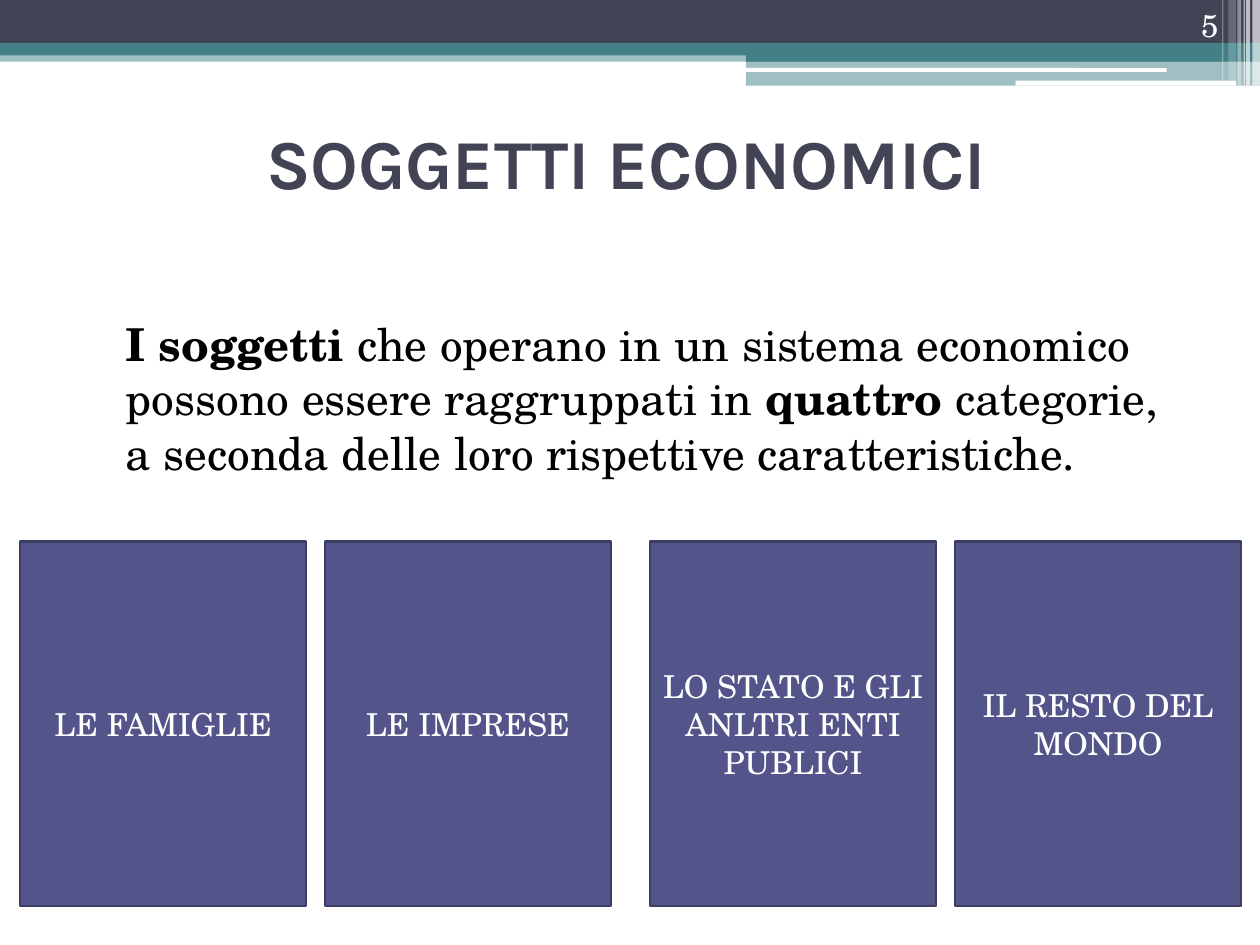
from dataclasses import dataclass

from lxml.etree import SubElement
from pptx import Presentation
from pptx.dml.color import RGBColor
from pptx.enum.shapes import MSO_SHAPE as Shape
from pptx.enum.text import MSO_ANCHOR as Anchor, PP_ALIGN as Align
from pptx.oxml.ns import qn
from pptx.util import Inches, Pt


@dataclass(frozen=True)
class Theme:
    dark: str = "424456"
    teal: str = "438086"
    white: str = "FFFFFF"
    black: str = "000000"
    card: str = "53548A"
    card_line: str = "3C3D64"
    heading_font: str = "Karla"
    body_font: str = "TeX Gyre Schola"
    title_size: float = 40
    body_size: float = 25.9
    label_size: float = 18


theme = Theme()

deck = Presentation()
deck.slide_width, deck.slide_height = Inches(10), Inches(7.5)
page = deck.slides.add_slide(deck.slide_layouts[6])

# The grid has 100 columns and 75 rows.
COLUMN = deck.slide_width / 100
ROW = deck.slide_height / 75


def add_block(left, top, width, height, color=None, opacity=100, kind=Shape.RECTANGLE):
    """Add a filled shape, or a text box without colour, placed in grid units."""
    place = [round(left * COLUMN), round(top * ROW), round(width * COLUMN), round(height * ROW)]
    if color is None:
        return page.shapes.add_textbox(*place)
    block = page.shapes.add_shape(kind, *place)
    block.shadow.inherit = False
    block.line.fill.background()
    block.fill.solid()
    block.fill.fore_color.rgb = RGBColor.from_string(color)
    if opacity < 100:
        tint = block.fill._xPr.find(".//" + qn("a:srgbClr"))
        SubElement(tint, qn("a:alpha"), val=str(opacity * 1000))
    return block


def write(box, spans, size, color, font=theme.body_font, align=Align.CENTER, anchor=Anchor.MIDDLE):
    """Fill a box with one paragraph made of (text, bold) spans."""
    frame = box.text_frame
    frame.word_wrap = True
    frame.vertical_anchor = anchor
    para = frame.paragraphs[0]
    para.alignment = align
    for text, bold in spans:
        span = para.add_run()
        span.text = text
        span.font.name = font
        span.font.size = Pt(size)
        span.font.bold = bold
        span.font.color.rgb = RGBColor.from_string(color)
    return para


# Header bands
for left, top, width, height, color, opacity in [
    (0, 4, 100, 0.9, theme.teal, 50),
    (0, 0, 100, 3.4, theme.dark, 100),
    (0, 3.4, 100, 1, theme.teal, 100),
    (59.2, 3.9, 40.8, 1, theme.teal, 100),
    (59.2, 4.8, 40.8, 2, theme.teal, 50),
]:
    add_block(left, top, width, height, color, opacity)

for left, top, width, height in [(59.1, 5.4, 33.5, 0.3), (80.6, 6.4, 17.5, 0.4)]:
    add_block(left, top, width, height, theme.white, kind=Shape.ROUNDED_RECTANGLE)

# Translucent stripes in the top right corner
for left, width, height, opacity in [
    (99.4, 0.6, 6.8, 65),
    (98.9, 0.3, 6.8, 65),
    (98.7, 0.1, 6.8, 60),
    (98.2, 0.3, 6.8, 40),
    (97.5, 0.6, 6.4, 20),
    (97, 0.1, 6.4, 30),
]:
    add_block(left, 0, width, height, theme.white, opacity)

# Title, body and slide number
title = add_block(4.7, 7, 90, 11.7)
write(title, [("SOGGETTI ECONOMICI", True)], theme.title_size, theme.dark, theme.heading_font)

body = add_block(5, 24.6, 90, 14.5)
body_spans = [
    ("I soggetti ", True),
    ("che operano in un sistema economico possono essere raggruppati in ", False),
    ("quattro", True),
    (" categorie, a seconda delle loro rispettive caratteristiche.", False),
]
body_para = write(body, body_spans, theme.body_size, theme.black, align=Align.LEFT, anchor=Anchor.TOP)
body_para._p.get_or_add_pPr().set("marL", str(round(4 * COLUMN)))

number = add_block(89.4, 0, 8.3, 4)
write(number, [("5", False)], theme.label_size, theme.white, align=Align.RIGHT, anchor=Anchor.BOTTOM)

# Four cards in two pairs, one pair in each half of the slide
subjects = ["LE FAMIGLIE", "LE IMPRESE", "LO STATO E GLI ANLTRI ENTI PUBLICI", "IL RESTO DEL MONDO"]
for index, subject in enumerate(subjects):
    pair, side = divmod(index, 2)
    card = add_block(1.6 + 50 * pair + 24.2 * side, 43, 22.7, 28.9, theme.card)
    card.line.color.rgb = RGBColor.from_string(theme.card_line)
    card.line.width = Pt(1.5)
    write(card, [(subject, False)], theme.label_size, theme.white)

deck.save("out.pptx")
